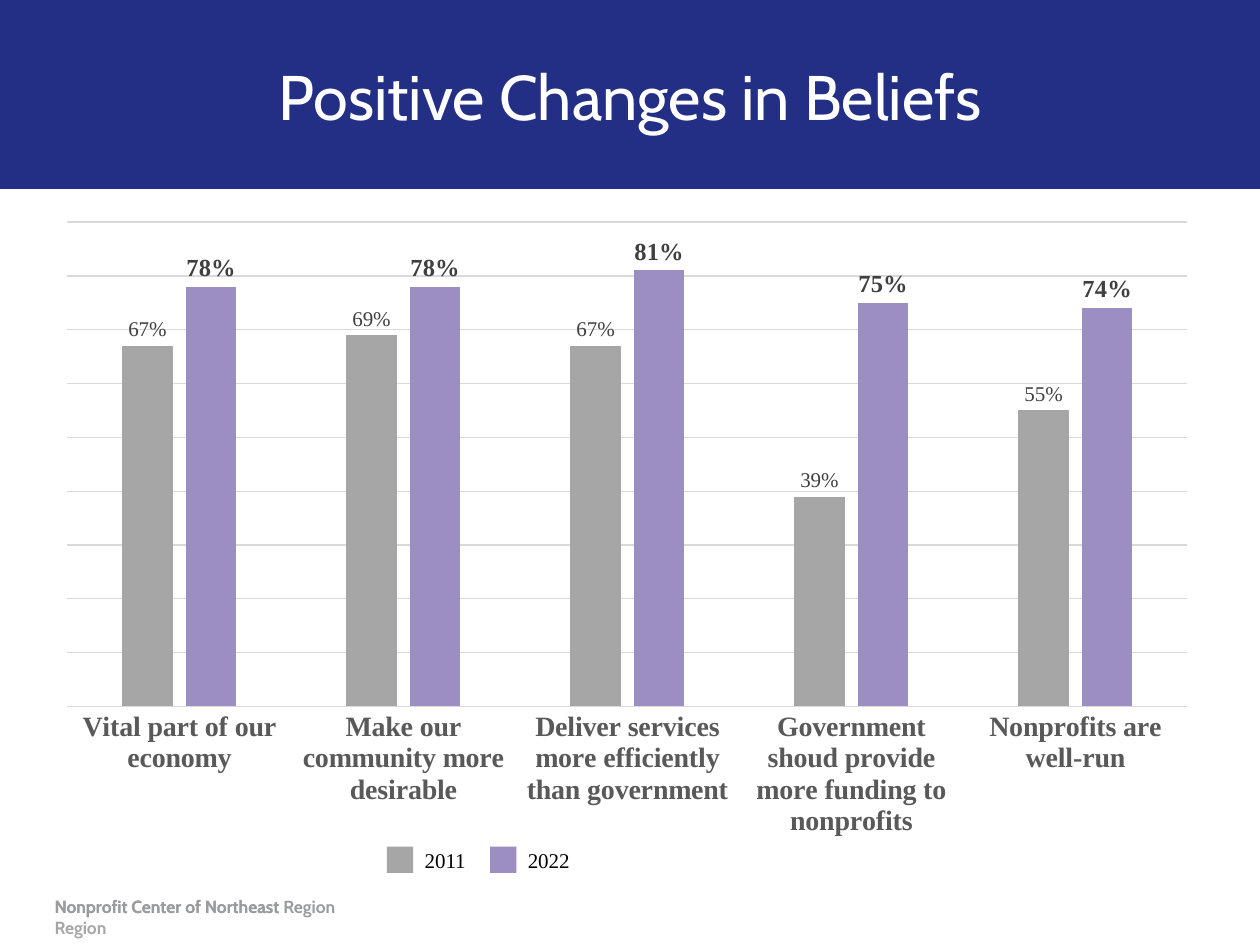
import dataclasses
import lxml.etree
import pptx
import pptx.chart.data
import pptx.dml.color
import pptx.enum.chart
import pptx.enum.shapes
import pptx.enum.text
import pptx.oxml
import pptx.oxml.ns
import pptx.util

Cm = pptx.util.Cm
Pt = pptx.util.Pt
qn = pptx.oxml.ns.qn


@dataclasses.dataclass(frozen=True)
class Theme:
    navy: str = "232F84"
    white: str = "FFFFFF"
    black: str = "000000"
    gray: str = "A6A6A6"
    purple: str = "9C8DC3"
    footer_gray: str = "999B9E"
    label_gray: str = "404040"
    axis_gray: str = "595959"
    grid_gray: str = "D9D9D9"
    sans: str = "Cabin"
    serif: str = "Times New Roman"
    title_size: int = 36
    category_size: int = 16
    strong_size: int = 14
    text_size: int = 12
    small_size: int = 10


THEME = Theme()
CATEGORIES = [
    "Vital part of our economy",
    "Make our community more desirable",
    "Deliver services more efficiently than government",
    "Government shoud provide more funding to nonprofits",
    "Nonprofits are well-run",
]
SERIES = [
    ("2011", (0.67, 0.69, 0.67, 0.39, 0.55), THEME.gray, THEME.text_size, False),
    ("2022", (0.78, 0.78, 0.81, 0.75, 0.74), THEME.purple, THEME.strong_size, True),
]
FOOTER = "Nonprofit Center of Northeast Region"


def color(value):
    return pptx.dml.color.RGBColor.from_string(value)


def apply(target, values):
    for name, value in values.items():
        setattr(target, name, value)


def style_font(font, size, shade, name, bold=False):
    apply(font, {"size": Pt(size), "name": name, "bold": bold})
    font.color.rgb = color(shade)


def style_line(line):
    line.color.rgb = color(THEME.grid_gray)
    line.width = Pt(0.75)


def add_block(page, left, top, width, height, shade):
    block = page.shapes.add_shape(
        pptx.enum.shapes.MSO_SHAPE.RECTANGLE, Cm(left), Cm(top), Cm(width), Cm(height))
    block.shadow.inherit = False
    block.fill.solid()
    block.fill.fore_color.rgb = color(shade)
    block.line.fill.background()


def add_text(page, place, text, size, shade, name, bold=False, frame=None, align=None):
    box = page.shapes.add_textbox(*map(Cm, place))
    apply(box.text_frame, {"word_wrap": True, **(frame or {})})
    para = box.text_frame.paragraphs[0]
    para.alignment = align
    span = para.add_run()
    span.text = text
    style_font(span.font, size, shade, name, bold)


def set_plot_layout(chart, **fractions):
    area = chart._chartSpace.chart.plotArea
    for old in area.findall(qn("c:layout")):
        area.remove(old)
    layout = lxml.etree.Element(qn("c:layout"))
    manual = lxml.etree.SubElement(layout, qn("c:manualLayout"))
    settings = {"layoutTarget": "inner", "xMode": "edge", "yMode": "edge", **fractions}
    for name, value in settings.items():
        lxml.etree.SubElement(manual, qn(f"c:{name}")).set("val", str(value))
    area.insert(0, layout)


def style_series(series, shade, size, bold):
    series.format.fill.solid()
    series.format.fill.fore_color.rgb = color(shade)
    series.invert_if_negative = False
    labels = series.data_labels
    apply(labels, {
        "show_value": True,
        "number_format": "0%",
        "number_format_is_linked": False,
        "position": pptx.enum.chart.XL_LABEL_POSITION.OUTSIDE_END,
    })
    style_font(labels.font, size, THEME.label_gray, THEME.serif, bold)


def add_belief_chart(page):
    data = pptx.chart.data.CategoryChartData(number_format="0%")
    data.categories = CATEGORIES
    for number, (_, values, *_) in enumerate(SERIES, 1):
        data.add_series(f"Series {number}", values)
    chart = page.shapes.add_chart(
        pptx.enum.chart.XL_CHART_TYPE.COLUMN_CLUSTERED,
        Cm(0.89), Cm(4.22), Cm(23.52), Cm(12.85), data).chart
    apply(chart, {"has_legend": False, "has_title": False})
    style_font(chart.font, THEME.small_size, THEME.black, THEME.serif)
    plot = chart.plots[0]
    apply(plot, {"gap_width": 219, "overlap": -27, "vary_by_categories": False})
    for series, (_, _, shade, size, bold) in zip(plot.series, SERIES):
        style_series(series, shade, size, bold)

    no_tick = pptx.enum.chart.XL_TICK_MARK.NONE
    axis = chart.category_axis
    apply(axis, {"major_tick_mark": no_tick, "minor_tick_mark": no_tick})
    style_font(axis.tick_labels.font, THEME.category_size, THEME.axis_gray, THEME.serif, True)
    style_line(axis.format.line)
    scale = chart.value_axis
    apply(scale, {
        "visible": False, "has_major_gridlines": True,
        "minimum_scale": 0, "maximum_scale": 0.9, "major_unit": 0.1,
    })
    style_line(scale.major_gridlines.format.line)
    set_plot_layout(chart, x=0.02, y=0.02, w=0.96, h=0.76)


def add_legend(page):
    for index, (year, _, shade, *_) in enumerate(SERIES):
        left = 7.8 + index * 2.08
        add_block(page, left, 17.07, 0.53, 0.53, shade)
        add_text(page, (left + 0.51, 16.97, 1.35, 0.76), year,
                 THEME.text_size, THEME.black, THEME.serif)


def add_footers(page):
    sides = ("left", "top", "right", "bottom")
    frame = {f"margin_{side}": Cm(0.13) for side in sides}
    for width, shade in ((5.89, THEME.gray), (6.55, THEME.footer_gray)):
        add_text(page, (0.97, 17.93, width, 0.69), FOOTER,
                 THEME.small_size, shade, THEME.sans, True, frame)


def main():
    deck = pptx.Presentation()
    apply(deck, {"slide_width": Cm(25.4), "slide_height": Cm(19.05)})
    page = deck.slides.add_slide(deck.slide_layouts[6])
    add_block(page, 0, 0, 25.4, 3.81, THEME.navy)
    add_text(page, (1.75, 0.08, 21.9, 3.68), "Positive Changes in Beliefs",
             THEME.title_size, THEME.white, THEME.sans,
             frame={"vertical_anchor": pptx.enum.text.MSO_ANCHOR.MIDDLE},
             align=pptx.enum.text.PP_ALIGN.CENTER)
    add_footers(page)
    add_belief_chart(page)
    add_legend(page)
    deck.save("out.pptx")


if __name__ == "__main__":
    main()
